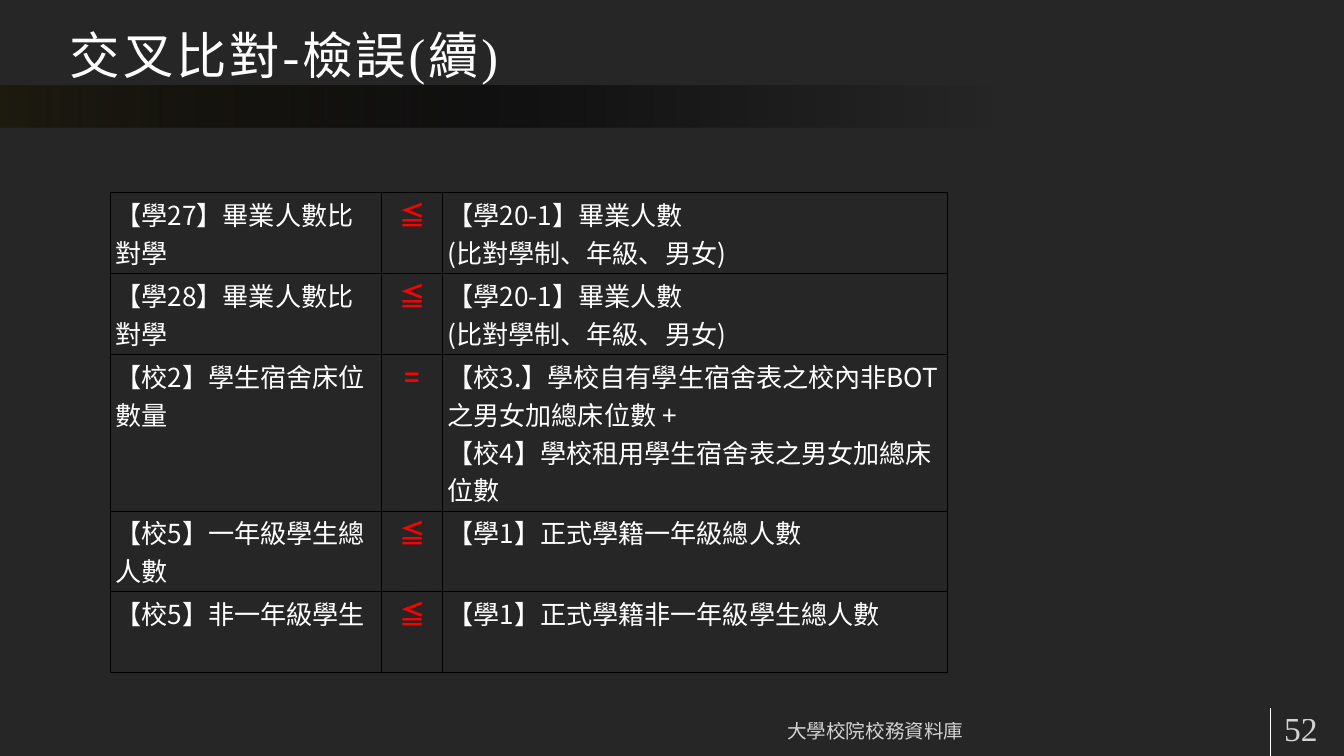
import dataclasses

import lxml.etree
import pptx
import pptx.dml.color
import pptx.enum.shapes
import pptx.enum.text
import pptx.oxml
import pptx.oxml.ns
import pptx.util

GRID_COLUMNS = 20
GRID_ROWS = 11.25
UNIT = pptx.util.Inches(1)
COLORS = {
    "background": "262626",
    "band": "1E1C11",
    "black": "000000",
    "text": "FFFFFF",
    "sign": "FF0000",
}
SERIF = "Times New Roman"
SANS = "Noto Sans CJK SC"
ALIGN = pptx.enum.text.PP_ALIGN
ANCHOR = pptx.enum.text.MSO_ANCHOR
DRAWING = pptx.oxml.ns.nsdecls("a")
COLUMN_WIDTHS = (4.03, 0.91, 7.51)
ROW_HEIGHTS = (0.88, 0.88, 0.47, 0.47, 0.47)


@dataclasses.dataclass(frozen=True)
class Frame:
    column: float
    row: float
    columns: float
    rows: float

    def lengths(self) -> tuple:
        return tuple(units(value) for value in dataclasses.astuple(self))


@dataclasses.dataclass(frozen=True)
class Style:
    size: float
    font: str = SERIF
    color: str = "text"
    bold: bool = False
    align: ALIGN = ALIGN.LEFT
    opacity: int = 100
    spacing: float = 0


@dataclasses.dataclass(frozen=True)
class Label:
    text: str
    frame: Frame
    anchor: ANCHOR
    style: Style


@dataclasses.dataclass(frozen=True)
class Check:
    left: str
    sign: str
    right: str


TITLE = Label("交叉比對-檢誤(續)", Frame(0.86, 0, 18, 1.35), ANCHOR.BOTTOM, Style(54, spacing=3))
FOOTERS = (
    Label("大學校院校務資料庫", Frame(7.16, 10.54, 11.73, 0.6), ANCHOR.BOTTOM,
          Style(21, align=ALIGN.CENTER, opacity=80)),
    Label("52", Frame(18.93, 10.54, 1.15, 0.6), ANCHOR.MIDDLE, Style(36, opacity=80)),
)
GRADUATES = "【學20-1】畢業人數\n(比對學制、年級、男女)"
CHECKS = (
    Check("【學27】畢業人數比對學", "≦", GRADUATES),
    Check("【學28】畢業人數比對學", "≦", GRADUATES),
    Check("【校2】學生宿舍床位數量", "=",
          "【校3.】學校自有學生宿舍表之校內非BOT之男女加總床位數 +\n"
          "【校4】學校租用學生宿舍表之男女加總床位數"),
    Check("【校5】一年級學生總人數", "≦", "【學1】正式學籍一年級總人數"),
    Check("【校5】非一年級學生", "≦", "【學1】正式學籍非一年級學生總人數"),
)
CELL_STYLE = Style(28, SANS)
SIGN_STYLE = Style(28, SANS, "sign", True, ALIGN.CENTER)


def units(value: float) -> int:
    return round(value * UNIT)


def rgb(name: str) -> pptx.dml.color.RGBColor:
    return pptx.dml.color.RGBColor.from_string(COLORS[name])


def write(text_frame, text: str, style: Style) -> None:
    text_frame.text = text
    for para in text_frame.paragraphs:
        para.alignment = style.align
        for span in para.runs:
            span.font.size = pptx.util.Pt(style.size)
            span.font.name = style.font
            span.font.bold = style.bold
            span.font.color.rgb = rgb(style.color)
            properties = span.font._element
            if style.font == SANS:
                east_asian = pptx.oxml.parse_xml(f'<a:ea {DRAWING} typeface="{SANS}"/>')
                properties.find(pptx.oxml.ns.qn("a:latin")).addnext(east_asian)
            if style.spacing:
                properties.set("spc", str(round(style.spacing * 100)))
            if style.opacity < 100:
                color = properties.find(".//" + pptx.oxml.ns.qn("a:srgbClr"))
                alpha = lxml.etree.SubElement(color, pptx.oxml.ns.qn("a:alpha"))
                alpha.set("val", str(style.opacity * 1000))


def place_label(box, label: Label) -> None:
    box.left, box.top, box.width, box.height = label.frame.lengths()
    text_frame = box.text_frame
    text_frame.word_wrap = True
    text_frame.auto_size = pptx.enum.text.MSO_AUTO_SIZE.NONE
    text_frame.vertical_anchor = label.anchor
    text_frame.margin_left = text_frame.margin_right = units(0.18)
    text_frame.margin_top = text_frame.margin_bottom = units(0.09)
    write(text_frame, label.text, label.style)


def draw_band(page) -> None:
    band = page.shapes.add_shape(
        pptx.enum.shapes.MSO_SHAPE.RECTANGLE, *Frame(0, 1.27, GRID_COLUMNS, 0.63).lengths())
    band.shadow.inherit = False
    band.line.fill.background()
    stops = "".join(
        f'<a:gs pos="{position * 1000}"><a:srgbClr val="{COLORS[color]}">'
        f'<a:alpha val="{opacity * 1000}"/></a:srgbClr></a:gs>'
        for position, color, opacity in ((0, "band", 100), (39, "black", 54), (74, "black", 0)))
    gradient = pptx.oxml.parse_xml(
        f'<a:gradFill {DRAWING} rotWithShape="1"><a:gsLst>{stops}</a:gsLst>'
        '<a:lin ang="0" scaled="0"/></a:gradFill>')
    band._element.spPr.find(pptx.oxml.ns.qn("a:prstGeom")).addnext(gradient)
    page.shapes._spTree.insert(2, band._element)


def draw_divider(page) -> None:
    divider = page.shapes.add_connector(
        pptx.enum.shapes.MSO_CONNECTOR.STRAIGHT,
        units(18.9), units(10.54), units(18.9), units(GRID_ROWS))
    divider.line.color.rgb = rgb("text")
    divider.line.width = pptx.util.Pt(0.75)
    lxml.etree.SubElement(divider._element.spPr, pptx.oxml.ns.qn("a:effectLst"))


def fill_cell(cell, text: str, style: Style) -> None:
    cell.margin_left = cell.margin_right = units(0.07)
    cell.margin_top = cell.margin_bottom = units(0.04)
    write(cell.text_frame, text, style)
    cell.fill.background()
    properties = cell._tc.get_or_add_tcPr()
    for index, side in enumerate(("lnL", "lnR", "lnT", "lnB")):
        properties.insert(index, pptx.oxml.parse_xml(
            f'<a:{side} {DRAWING} w="{pptx.util.Pt(1)}"><a:solidFill>'
            f'<a:srgbClr val="{COLORS["black"]}"/></a:solidFill></a:{side}>'))


def draw_checks(page) -> None:
    frame = Frame(1.65, 2.87, sum(COLUMN_WIDTHS), sum(ROW_HEIGHTS))
    table = page.shapes.add_table(len(CHECKS), len(COLUMN_WIDTHS), *frame.lengths()).table
    table.first_row = table.horz_banding = False
    for column, width in zip(table.columns, COLUMN_WIDTHS):
        column.width = units(width)
    for row, height, check in zip(table.rows, ROW_HEIGHTS, CHECKS):
        row.height = units(height)
        styles = (CELL_STYLE, SIGN_STYLE, CELL_STYLE)
        for cell, text, style in zip(row.cells, dataclasses.astuple(check), styles):
            fill_cell(cell, text, style)


def main() -> None:
    deck = pptx.Presentation()
    deck.slide_width, deck.slide_height = units(GRID_COLUMNS), units(GRID_ROWS)
    page = deck.slides.add_slide(deck.slide_layouts.get_by_name("Title Only"))
    page.background.fill.solid()
    page.background.fill.fore_color.rgb = rgb("background")
    draw_band(page)
    draw_divider(page)
    place_label(page.shapes.title, TITLE)
    for label in FOOTERS:
        place_label(page.shapes.add_textbox(*label.frame.lengths()), label)
    draw_checks(page)
    deck.save("out.pptx")


if __name__ == "__main__":
    main()
